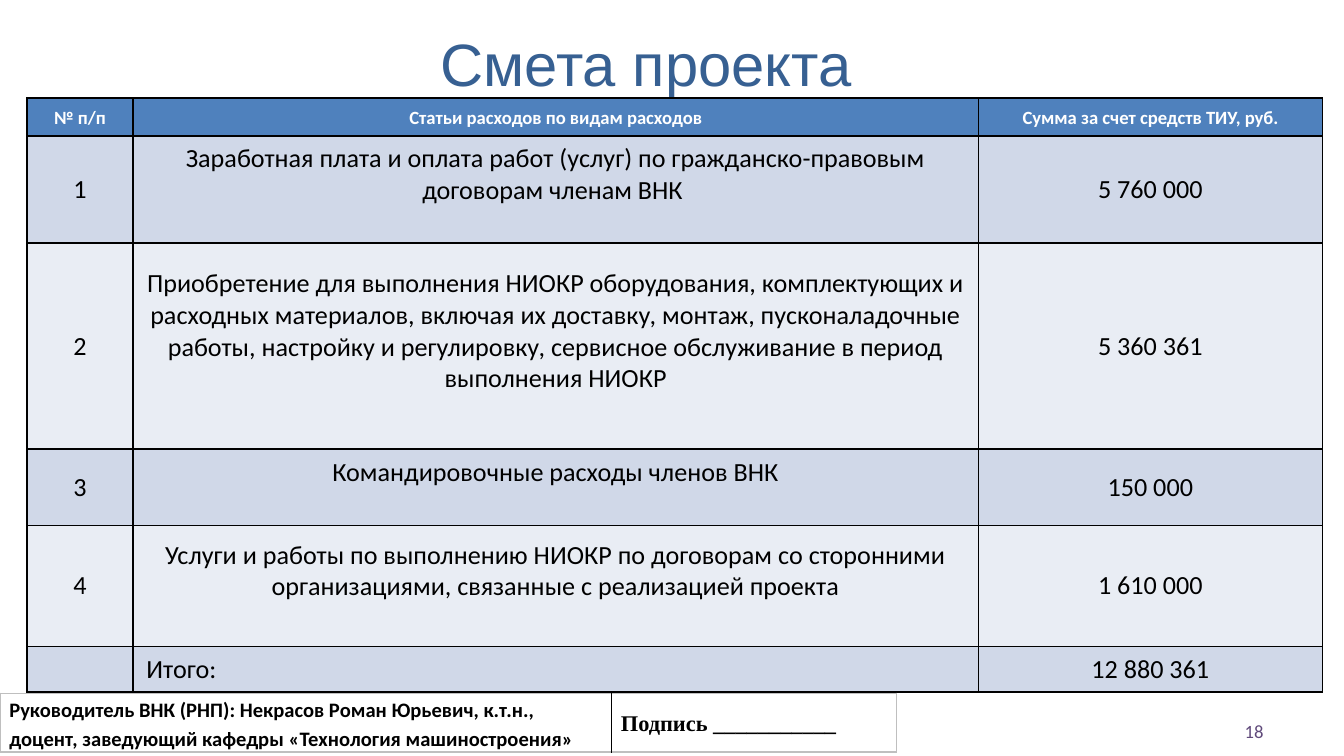
"""Build the project budget slide."""
from dataclasses import dataclass, field

from lxml.etree import SubElement
from pptx import Presentation
from pptx.dml.color import RGBColor
from pptx.enum.text import MSO_ANCHOR as Anchor, PP_ALIGN as Align
from pptx.oxml.ns import qn
from pptx.util import Inches, Pt

WIDTH = 10
HEIGHT = WIDTH * 9 / 16
BLACK, GREY, WHITE = "000000", "BFBFBF", "FFFFFF"
HEADER, BANDS = "4F81BD", ("D0D8E8", "E9EDF4")
SIDES = "LRTB"
NORMAL = {"left": 0.1, "right": 0.1, "top": 0.05, "bottom": 0.05}
RAISED = NORMAL | {"bottom": 0.27}
SLIM = {"left": 0.07, "right": 0.07, "top": 0, "bottom": 0}


@dataclass(frozen=True)
class Style:
    """Look of one piece of text."""
    size: float
    color: str = BLACK
    font: str = "Calibri"
    bold: bool = False
    align: Align = Align.CENTER
    spacing: float = 1.0


@dataclass(frozen=True)
class Entry:
    """One table cell."""
    text: str
    style: Style
    fill: str | None = None
    margins: dict[str, float] = field(default_factory=lambda: NORMAL)


@dataclass(frozen=True)
class Grid:
    """Position, column widths and row heights of a table."""
    left: float
    top: float
    columns: tuple[float, ...]
    rows: tuple[float, ...]
    frame: str = BLACK


def rgb(value: str) -> RGBColor:
    """Turn a hex string into a colour."""
    return RGBColor.from_string(value)


def apply(target, values: dict) -> None:
    """Set every attribute named in values."""
    for name, value in values.items():
        setattr(target, name, value)


def write(frame, text: str, style: Style) -> None:
    """Write one formatted paragraph."""
    paragraph = frame.paragraphs[0]
    apply(paragraph, {"alignment": style.align, "line_spacing": style.spacing})
    run = paragraph.add_run()
    run.text = text
    apply(run.font, {"size": Pt(style.size), "name": style.font, "bold": style.bold})
    run.font.color.rgb = rgb(style.color)


def draw_borders(cell, colors: dict[str, str]) -> None:
    """Give a cell one-point borders ahead of its fill."""
    properties = cell._tc.get_or_add_tcPr()
    for side in SIDES:
        line = SubElement(properties, qn(f"a:ln{side}"), w=str(Pt(1)))
        solid = SubElement(line, qn("a:solidFill"))
        SubElement(solid, qn("a:srgbClr"), val=colors[side])


def draw_cell(cell, entry: Entry, borders: dict[str, str]) -> None:
    """Fill, frame and write one cell."""
    draw_borders(cell, borders)
    if entry.fill:
        cell.fill.solid()
        cell.fill.fore_color.rgb = rgb(entry.fill)
    else:
        cell.fill.background()
    apply(cell, {f"margin_{side}": Inches(gap) for side, gap in entry.margins.items()})
    cell.vertical_anchor = Anchor.MIDDLE
    if entry.text:
        write(cell.text_frame, entry.text, entry.style)


def draw_table(slide, grid: Grid, entries: list[list[Entry]]) -> None:
    """Add a table sized by its grid."""
    last_row, last_column = len(grid.rows) - 1, len(grid.columns) - 1
    box = (grid.left, grid.top, sum(grid.columns), sum(grid.rows))
    table = slide.shapes.add_table(
        last_row + 1, last_column + 1, *map(Inches, box)).table
    for column, width in zip(table.columns, grid.columns):
        column.width = Inches(width)
    for row, height in zip(table.rows, grid.rows):
        row.height = Inches(height)
    for r, line in enumerate(entries):
        for c, entry in enumerate(line):
            outer = {"L": c == 0, "R": c == last_column, "T": r == 0, "B": r == last_row}
            borders = {side: grid.frame if edge else BLACK for side, edge in outer.items()}
            draw_cell(table.cell(r, c), entry, borders)


def place(shape, left: float, top: float, width: float, height: float) -> None:
    """Place a shape by shares of the slide's size."""
    apply(shape, {"left": Inches(left * WIDTH), "top": Inches(top * HEIGHT),
                  "width": Inches(width * WIDTH), "height": Inches(height * HEIGHT)})
    apply(shape.text_frame, {"word_wrap": True, "vertical_anchor": Anchor.MIDDLE})


def budget_entries() -> list[list[Entry]]:
    """List the header, expense and total rows."""
    heading = Style(10, WHITE, bold=True, spacing=1.07)
    body, total = Style(14), Style(14, align=Align.LEFT)
    headings = ("№ п/п", "Статьи расходов по видам расходов", "Сумма за счет средств ТИУ, руб.")
    expenses = (
        ("Заработная плата и оплата работ (услуг) по гражданско-правовым договорам членам ВНК ",
         "5 760 000"),
        ("Приобретение для выполнения НИОКР оборудования, комплектующих и расходных материалов, "
         "включая их доставку, монтаж, пусконаладочные работы, настройку и регулировку, "
         "сервисное обслуживание в период выполнения НИОКР", "5 360 361"),
        ("Командировочные расходы членов ВНК", "150 000"),
        ("Услуги и работы по выполнению НИОКР по договорам со сторонними организациями, "
         "связанные с реализацией проекта", "1 610 000"),
    )
    entries = [[Entry(text, heading, HEADER, SLIM) for text in headings]]
    for number, (expense, amount) in enumerate(expenses, 1):
        band = BANDS[(number - 1) % 2]
        entries.append([Entry(str(number), body, band), Entry(expense, body, band, RAISED),
                        Entry(amount, body, band)])
    entries.append([Entry("", body, BANDS[0], SLIM), Entry("Итого:", total, BANDS[0]),
                    Entry("12 880 361", body, BANDS[0])])
    return entries


def main() -> None:
    """Build and save the slide."""
    deck = Presentation()
    apply(deck, {"slide_width": Inches(WIDTH), "slide_height": Inches(HEIGHT)})
    slide = deck.slides.add_slide(deck.slide_layouts[5])

    title = slide.shapes.title
    place(title, 0.031, 0, 0.9, 0.167)
    write(title.text_frame, "Смета проекта", Style(32, "376092", "Arial"))

    budget = Grid(0.2, 0.73, (0.79, 6.29, 2.56), (0.28, 0.8, 1.53, 0.57, 0.9, 0.34))
    draw_table(slide, budget, budget_entries())

    leader = Style(11, bold=True, align=Align.LEFT, spacing=1.15)
    signature = Style(12, font="Times New Roman", bold=True, align=Align.JUSTIFY, spacing=1.15)
    draw_table(slide, Grid(0, 5.16, (4.55, 2.12), (0.42,), GREY), [[
        Entry("Руководитель ВНК (РНП): Некрасов Роман Юрьевич, к.т.н., доцент, "
              "заведующий кафедры «Технология машиностроения»", leader, margins=SLIM),
        Entry("Подпись ___________", signature, margins=SLIM)]])

    page_number = slide.shapes.add_textbox(0, 0, 0, 0)
    place(page_number, 0.717, 0.94, 0.233, 0.053)
    write(page_number.text_frame, "18", Style(10, "604A7B", align=Align.RIGHT))
    deck.save("out.pptx")


if __name__ == "__main__":
    main()
